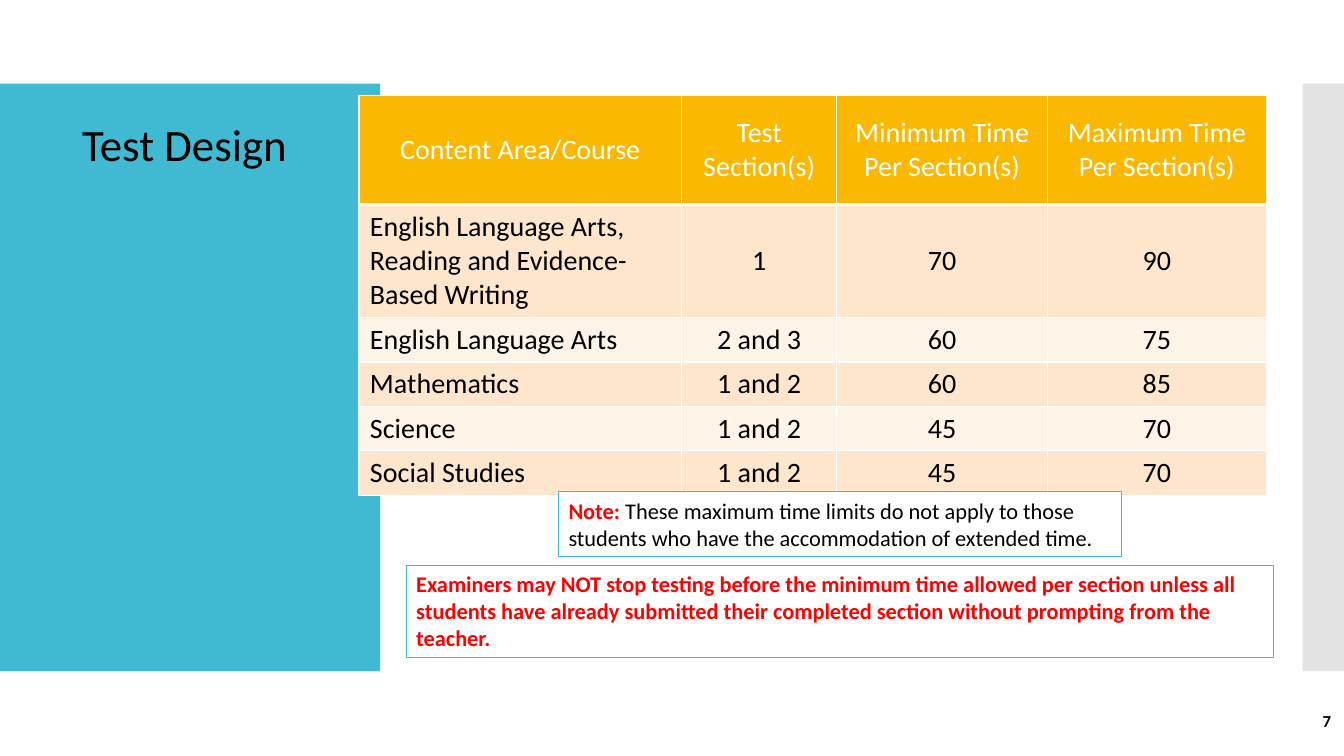
"""Build the Test Design slide with its table of section times."""
from lxml import etree
from pptx import Presentation, util as u
from pptx.dml.color import RGBColor
from pptx.enum import shapes, text
from pptx.oxml import ns

PX = 9144
TEAL, GOLD, WHITE, BLACK, RED = "40BAD2", "FAB900", "FFFFFF", "000000", "FF0000"
LEFT, MID, RIGHT = text.PP_ALIGN.LEFT, text.PP_ALIGN.CENTER, text.PP_ALIGN.RIGHT
TOP, CENTER = text.MSO_ANCHOR.TOP, text.MSO_ANCHOR.MIDDLE


def paint(part, color):
    part.solid()
    part.fore_color.rgb = RGBColor.from_string(color)


def write(frame, *runs, size=20, color=BLACK, bold=False, align=LEFT):
    frame.word_wrap = True
    para = frame.paragraphs[0]
    para.alignment = align
    for words, look in runs:
        run = para.add_run()
        run.text = words
        font = run.font
        font.name, font.size = "Calibri", u.Pt(size)
        font.bold = look.get("bold", bold)
        paint(font.fill, look.get("color", color))


deck = Presentation()
deck.slide_width, deck.slide_height = 1333 * PX, 750 * PX
slide = deck.slides.add_slide(deck.slide_layouts[5])
items = slide.shapes

for left, width, color in [(0, 377, TEAL), (1292, 41, "E3E3E3")]:
    panel = items.add_shape(shapes.MSO_SHAPE.RECTANGLE, left * PX, 83 * PX, width * PX, 583 * PX)
    panel.shadow.inherit = False
    paint(panel.fill, color)
    panel.line.fill.background()

rows = [
    ("Content Area/Course", "Test Section(s)", "Minimum Time Per Section(s)", "Maximum Time Per Section(s)"),
    ("English Language Arts, Reading and Evidence-Based Writing", "1", "70", "90"),
    ("English Language Arts", "2 and 3", "60", "75"),
    ("Mathematics", "1 and 2", "60", "85"),
    ("Science", "1 and 2", "45", "70"),
    ("Social Studies", "1 and 2", "45", "70"),
]
widths = [320, 154, 209, 217]
heights = [108, 112, 44, 44, 44, 44]
table = items.add_table(len(rows), len(widths), 356 * PX, 95 * PX, sum(widths) * PX, sum(heights) * PX).table
for col, width in zip(table.columns, widths):
    col.width = width * PX
for r, (row, height) in enumerate(zip(rows, heights)):
    table.rows[r].height = height * PX
    band = GOLD if r == 0 else "FDE6CC" if r % 2 else "FEF3E7"
    for c, words in enumerate(row):
        cell = table.cell(r, c)
        cell.margin_left = cell.margin_right = 11 * PX
        cell.margin_top = cell.margin_bottom = 5 * PX
        cell.vertical_anchor = CENTER if r == 0 or (r == 1 and c) else TOP
        write(cell.text_frame, (words, {}), color=BLACK if r else WHITE, align=MID if c or r == 0 else LEFT)
        props = cell._tc.get_or_add_tcPr()
        for side in ("lnL", "lnR", "lnT", "lnB"):
            thick = 3 if r == 0 and side == "lnB" else 1
            edge = etree.SubElement(props, ns.qn("a:" + side), w=str(u.Pt(thick)))
            fill = etree.SubElement(edge, ns.qn("a:solidFill"))
            etree.SubElement(fill, ns.qn("a:srgbClr"), val=WHITE)
        paint(cell.fill, band)

number = items.add_textbox(1163 * PX, 695 * PX, 167 * PX, 40 * PX).text_frame
number.vertical_anchor = CENTER
write(number, ("7", {}), size=12, bold=True, align=RIGHT)

notes = [
    ((554, 488, 558, 64), [
        ("Note: ", {"color": RED, "bold": True}),
        ("These maximum time limits do not apply to those students who have the accommodation of extended time.", {}),
    ]),
    ((403, 561, 860, 91), [
        ("Examiners may NOT stop testing before the minimum time allowed per section unless all students "
         "have already submitted their completed section without prompting from the teacher.",
         {"color": RED, "bold": True}),
    ]),
]
for place, runs in notes:
    note = items.add_shape(shapes.MSO_SHAPE.RECTANGLE, *(n * PX for n in place))
    note.shadow.inherit = False
    paint(note.fill, WHITE)
    paint(note.line.fill, TEAL)
    note.line.width = u.Pt(0.85)
    note.text_frame.vertical_anchor = TOP
    write(note.text_frame, *runs, size=16)

title = items.title
title.left, title.top, title.width, title.height = (n * PX for n in (50, 111, 266, 118))
title.text_frame.auto_size = text.MSO_AUTO_SIZE.NONE
title.text_frame.vertical_anchor = TOP
write(title.text_frame, ("Test Design", {}), size=32, align=MID)
items._spTree.append(title._element)

deck.save("out.pptx")
